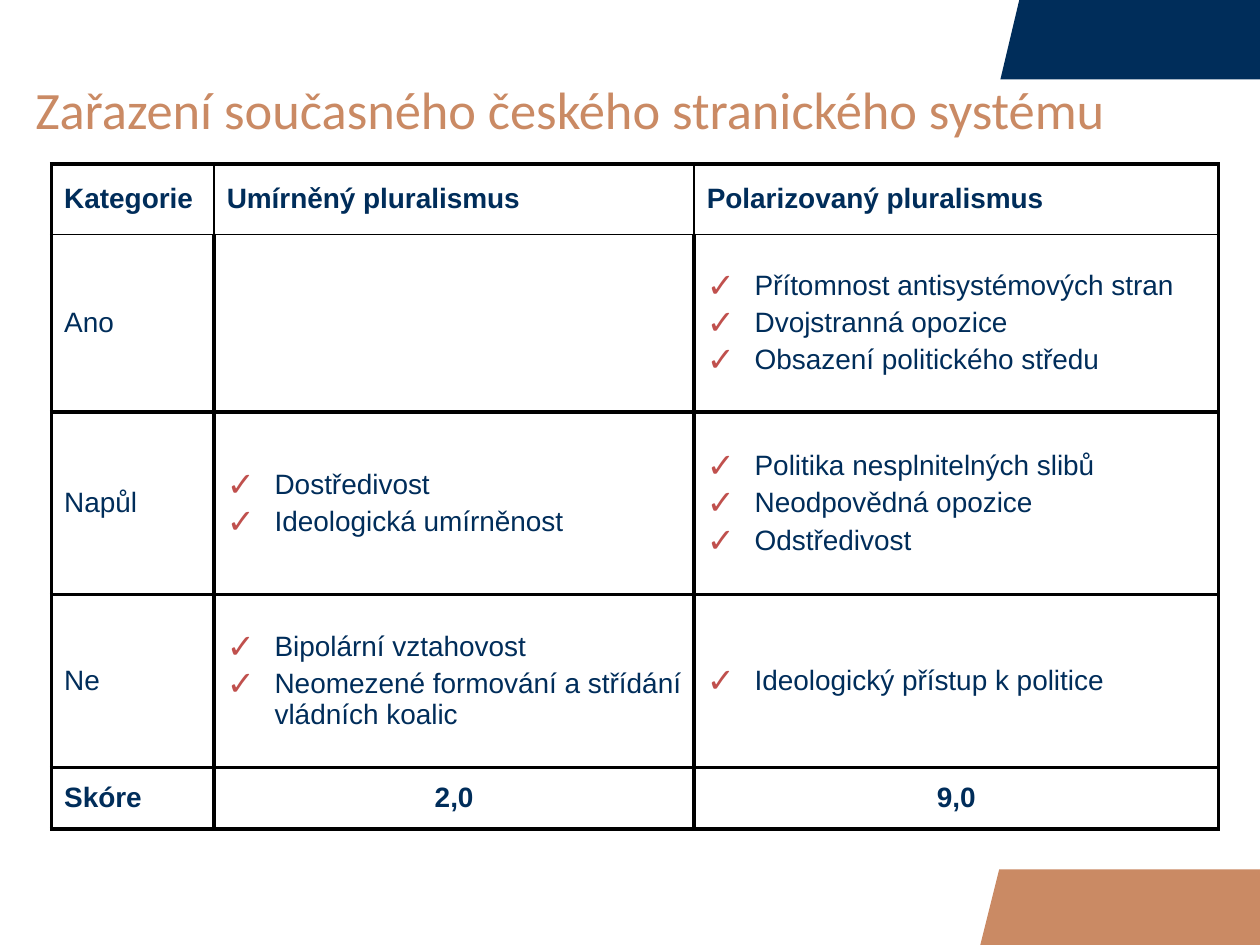
from lxml.etree import SubElement
from pptx import Presentation
from pptx.dml.color import RGBColor
from pptx.enum.text import MSO_ANCHOR, MSO_AUTO_SIZE, PP_ALIGN
from pptx.oxml.ns import qn
from pptx.util import Inches, Pt

NAVY, TAN, RED, BLACK = "002D5A", "CA8A64", "C0504D", "000000"
TITLE = "Zařazení současného českého stranického systému"
HEAD = ["Kategorie", "Umírněný pluralismus", "Polarizovaný pluralismus"]
BODY = [
    ("Ano", [],
     ["Přítomnost antisystémových stran", "Dvojstranná opozice",
      "Obsazení politického středu"]),
    ("Napůl", ["Dostředivost", "Ideologická umírněnost"],
     ["Politika nesplnitelných slibů", "Neodpovědná opozice", "Odstředivost"]),
    ("Ne",
     ["Bipolární vztahovost", "Neomezené formování a střídání vládních koalic"],
     ["Ideologický přístup k politice"]),
]
SCORE = ["Skóre", "2,0", "9,0"]
ROWS = [HEAD, *BODY, SCORE]
WIDTHS = [1.29, 3.81, 4.16]
HEIGHTS = [0.56, 1.41, 1.45, 1.37, 0.49]
BANDS = [
    (NAVY, [(7.94, 0.63), (8.09, 0), (10, 0), (10, 0.63)]),
    (TAN, [(7.78, 7.5), (7.93, 6.9), (10, 6.9), (10, 7.5)]),
]
THICK, THIN = 2.25, 1


def rgb(code):
    return RGBColor.from_string(code)


def add_band(slide, color, points):
    first, *rest = [(Inches(x), Inches(y)) for x, y in points]
    pen = slide.shapes.build_freeform(*first)
    pen.add_line_segments(rest, close=True)
    band = pen.convert_to_shape()
    band.shadow.inherit = False
    band.fill.solid()
    band.fill.fore_color.rgb = rgb(color)
    band.line.fill.background()


def add_color(parent, color):
    SubElement(parent, qn("a:srgbClr"), val=color)


def set_edges(cell, row, col):
    """Draw thick edges, but thin ones inside and under the header row."""
    last = len(WIDTHS) - 1
    edges = {
        "L": THIN if row == 0 and col > 0 else THICK,
        "R": THIN if row == 0 and col < last else THICK,
        "T": THIN if row == 1 else THICK,
        "B": THIN if row == 0 else THICK,
    }
    props = cell._tc.get_or_add_tcPr()
    for side, width in edges.items():
        line = SubElement(props, qn(f"a:ln{side}"), w=str(Pt(width)))
        add_color(SubElement(line, qn("a:solidFill")), BLACK)


def add_check(para):
    """Give the paragraph a hanging check mark."""
    props = para._p.get_or_add_pPr()
    props.set("marL", str(Inches(0.38)))
    props.set("indent", str(-Inches(0.38)))
    add_color(SubElement(props, qn("a:buClr")), RED)
    SubElement(props, qn("a:buSzPct"), val="120000")
    SubElement(props, qn("a:buFont"), typeface="Arial")
    SubElement(props, qn("a:buChar"), char="✓")


def style(para, font, size, color, bold=False):
    para.font.name = font
    para.font.size = Pt(size)
    para.font.color.rgb = rgb(color)
    para.font.bold = bold


def fill_cell(cell, item, row, col):
    listed = isinstance(item, list)
    ends = row in (0, len(ROWS) - 1)
    cell.vertical_anchor = MSO_ANCHOR.MIDDLE
    set_edges(cell, row, col)
    cell.fill.background()
    cell.text = "\n".join(item) if listed else item
    for para in cell.text_frame.paragraphs:
        para.space_before = Pt(3.4)
        if item and listed:
            add_check(para)
        if row == len(ROWS) - 1 and col > 0:
            para.alignment = PP_ALIGN.CENTER
        style(para, "Arial", 16, NAVY, ends)


def add_title(slide):
    title = slide.shapes.title
    title.left, title.top = Inches(0), Inches(0.36)
    title.width, title.height = Inches(10), Inches(1.01)
    frame = title.text_frame
    frame.text = TITLE
    frame.auto_size = MSO_AUTO_SIZE.NONE
    frame.vertical_anchor = MSO_ANCHOR.MIDDLE
    frame.margin_left = frame.margin_right = Inches(0.28)
    para = frame.paragraphs[0]
    para.alignment = PP_ALIGN.LEFT
    style(para, "Calibri", 30, TAN)


def add_grid(slide):
    table = slide.shapes.add_table(
        len(ROWS), len(WIDTHS), Inches(0.41), Inches(1.3),
        Inches(sum(WIDTHS)), Inches(sum(HEIGHTS))).table
    table.first_row = table.horz_banding = False
    for column, width in zip(table.columns, WIDTHS):
        column.width = Inches(width)
    for row, (items, height) in enumerate(zip(ROWS, HEIGHTS)):
        table.rows[row].height = Inches(height)
        for col, item in enumerate(items):
            fill_cell(table.cell(row, col), item, row, col)


def main():
    deck = Presentation()
    deck.slide_width, deck.slide_height = Inches(10), Inches(7.5)
    slide = deck.slides.add_slide(deck.slide_layouts.get_by_name("Title Only"))
    for color, points in BANDS:
        add_band(slide, color, points)
    add_title(slide)
    add_grid(slide)
    deck.save("out.pptx")


if __name__ == "__main__":
    main()
